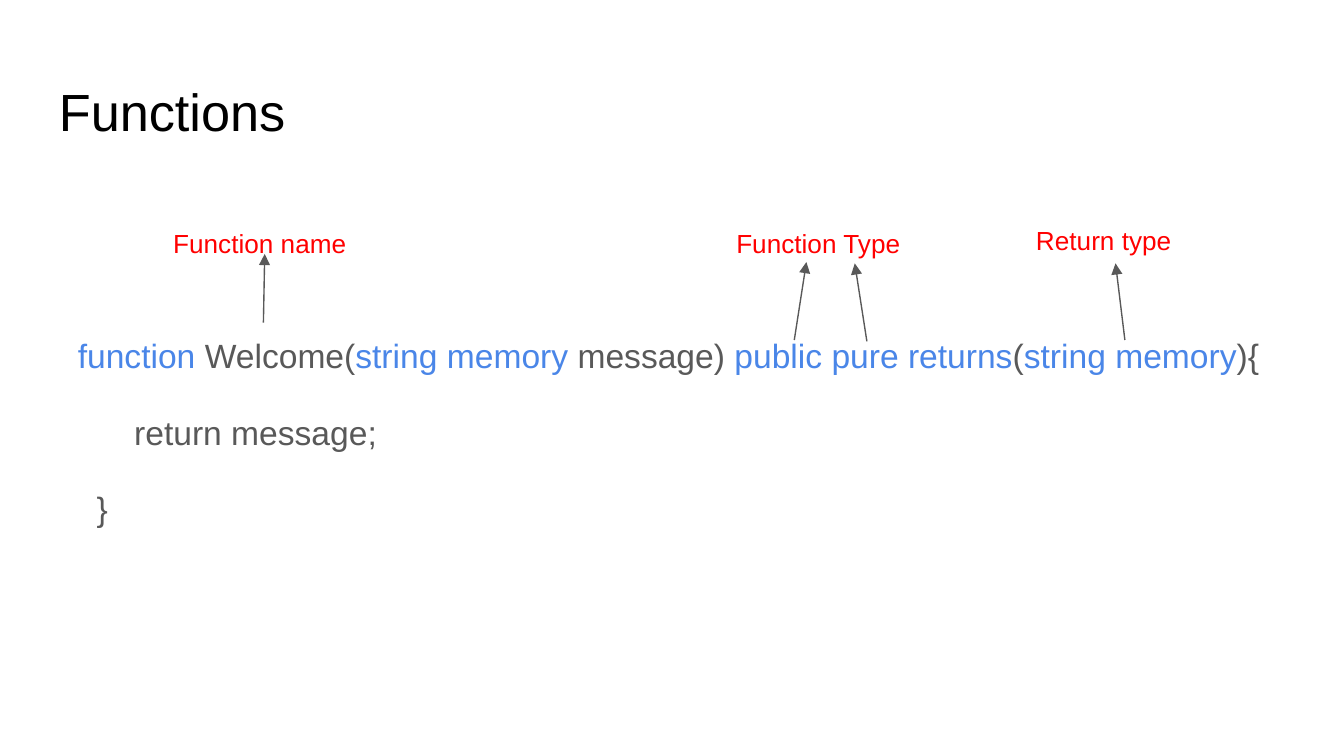
from dataclasses import dataclass

from lxml import etree
from pptx import Presentation
from pptx.dml.color import RGBColor
from pptx.enum import shapes, text
from pptx.oxml import ns
from pptx.util import Inches, Pt


@dataclass(frozen=True)
class Theme:
    font: str = "Arial"
    title: str = "000000"
    code: str = "595959"
    keyword: str = "4A86E8"
    label: str = "FF0000"
    arrow: str = "595959"
    title_size: int = 28
    code_size: int = 18
    label_size: int = 14
    arrow_width: float = 0.75


THEME = Theme()

# Each code line: indent in inches, then (words, colour) runs
CODE_LINES = [
    (0.14, [
        ("function", THEME.keyword),
        (" Welcome(", THEME.code),
        ("string memory", THEME.keyword),
        (" message) ", THEME.code),
        ("public pure returns", THEME.keyword),
        ("(", THEME.code),
        ("string memory", THEME.keyword),
        ("){", THEME.code),
    ]),
    (0.56, [("return message;", THEME.code)]),
    (0.28, [("}", THEME.code)]),
]

# Each label: words, box, and its arrows from the code up to the label
ANNOTATIONS = [
    ("Function name", (1.19, 1.59, 1.56, 0.29), [(1.96, 2.4, 1.97, 1.89)]),
    ("Function Type", (5.38, 1.59, 1.62, 0.29),
     [(5.91, 2.53, 6, 1.95), (6.45, 2.54, 6.36, 1.96)]),
    ("Return type", (7.61, 1.57, 1.68, 0.34), [(8.37, 2.53, 8.3, 1.96)]),
]


def add_run(paragraph, words, *, size, color):
    run = paragraph.add_run()
    run.text = words
    run.font.name = THEME.font
    run.font.size = Pt(size)
    run.font.color.rgb = RGBColor.from_string(color)


def add_frame(slide, box):
    frame = slide.shapes.add_textbox(*map(Inches, box)).text_frame
    frame.word_wrap = True
    frame.vertical_anchor = text.MSO_ANCHOR.TOP
    frame.margin_left = frame.margin_right = Inches(0.1)
    frame.margin_top = frame.margin_bottom = Inches(0.1)
    return frame


def add_text(slide, words, box, **style):
    add_run(add_frame(slide, box).paragraphs[0], words, **style)


def add_code(slide, lines, box):
    frame = add_frame(slide, box)
    for number, (indent, runs) in enumerate(lines):
        line = frame.add_paragraph() if number else frame.paragraphs[0]
        line.line_spacing = 1.15
        line.space_before = Pt(16 if number else 0)
        line._p.get_or_add_pPr().set("marL", str(Inches(indent)))
        for words, color in runs:
            add_run(line, words, size=THEME.code_size, color=color)


def add_arrow(slide, ends):
    arrow = slide.shapes.add_connector(
        shapes.MSO_CONNECTOR.STRAIGHT, *map(Inches, ends))
    arrow.line.color.rgb = RGBColor.from_string(THEME.arrow)
    arrow.line.width = Pt(THEME.arrow_width)
    # Arrowhead at the label, and no shadow
    etree.SubElement(arrow.line._get_or_add_ln(), ns.qn("a:tailEnd"),
                     type="triangle", w="med", len="med")
    etree.SubElement(arrow._element.spPr, ns.qn("a:effectLst"))


def main():
    # Widescreen slide, 16:9
    deck = Presentation()
    deck.slide_width = Inches(10)
    deck.slide_height = Inches(10 * 9 / 16)
    slide = deck.slides.add_slide(deck.slide_layouts[6])

    # Title and code sample
    add_text(slide, "Functions", (0.34, 0.49, 9.32, 0.63),
             size=THEME.title_size, color=THEME.title)
    add_code(slide, CODE_LINES, (0.34, 2.35, 9.32, 2.65))

    # Labels with their arrows
    for words, box, arrows in ANNOTATIONS:
        add_text(slide, words, box,
                 size=THEME.label_size, color=THEME.label)
        for ends in arrows:
            add_arrow(slide, ends)

    deck.save("out.pptx")


if __name__ == "__main__":
    main()
